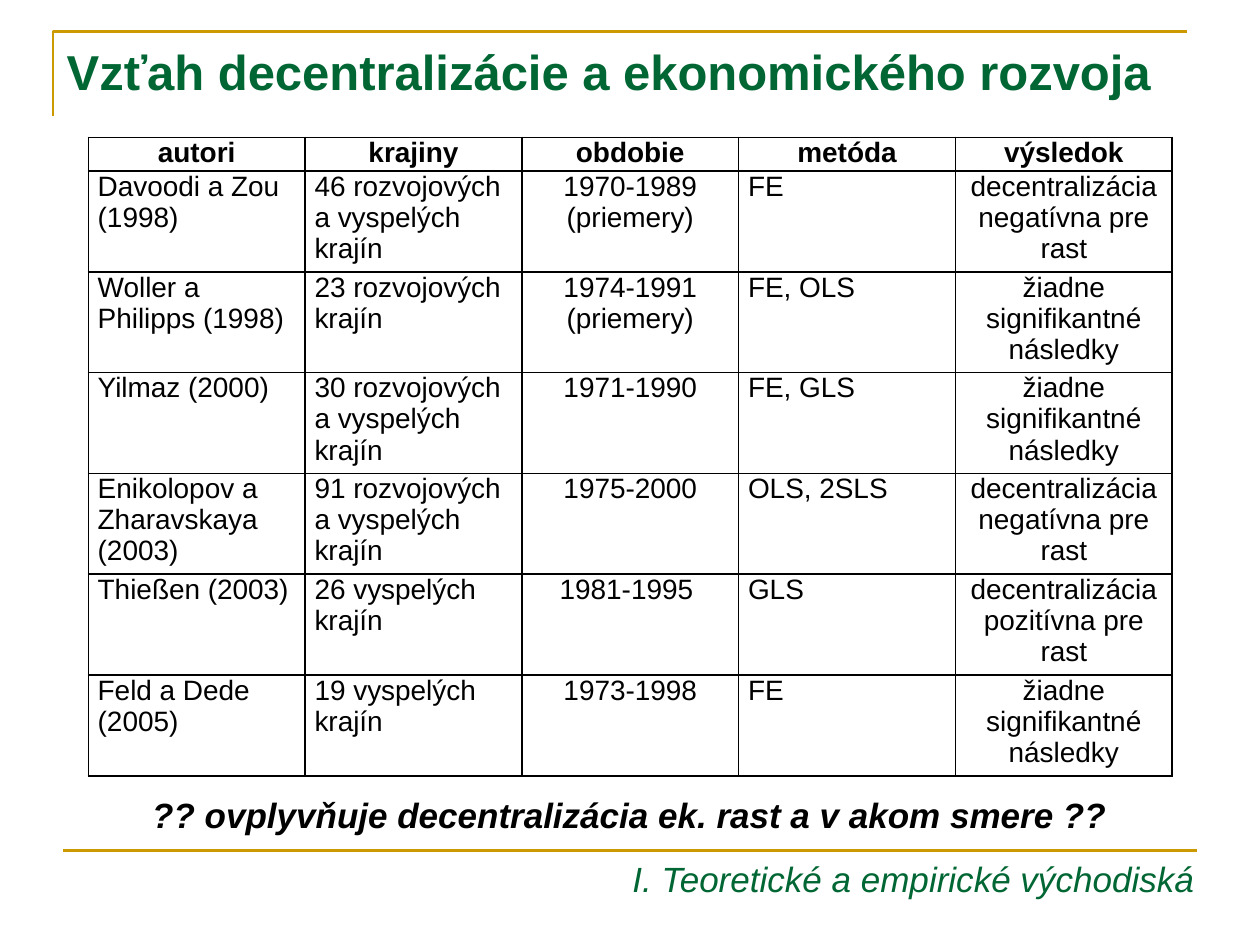
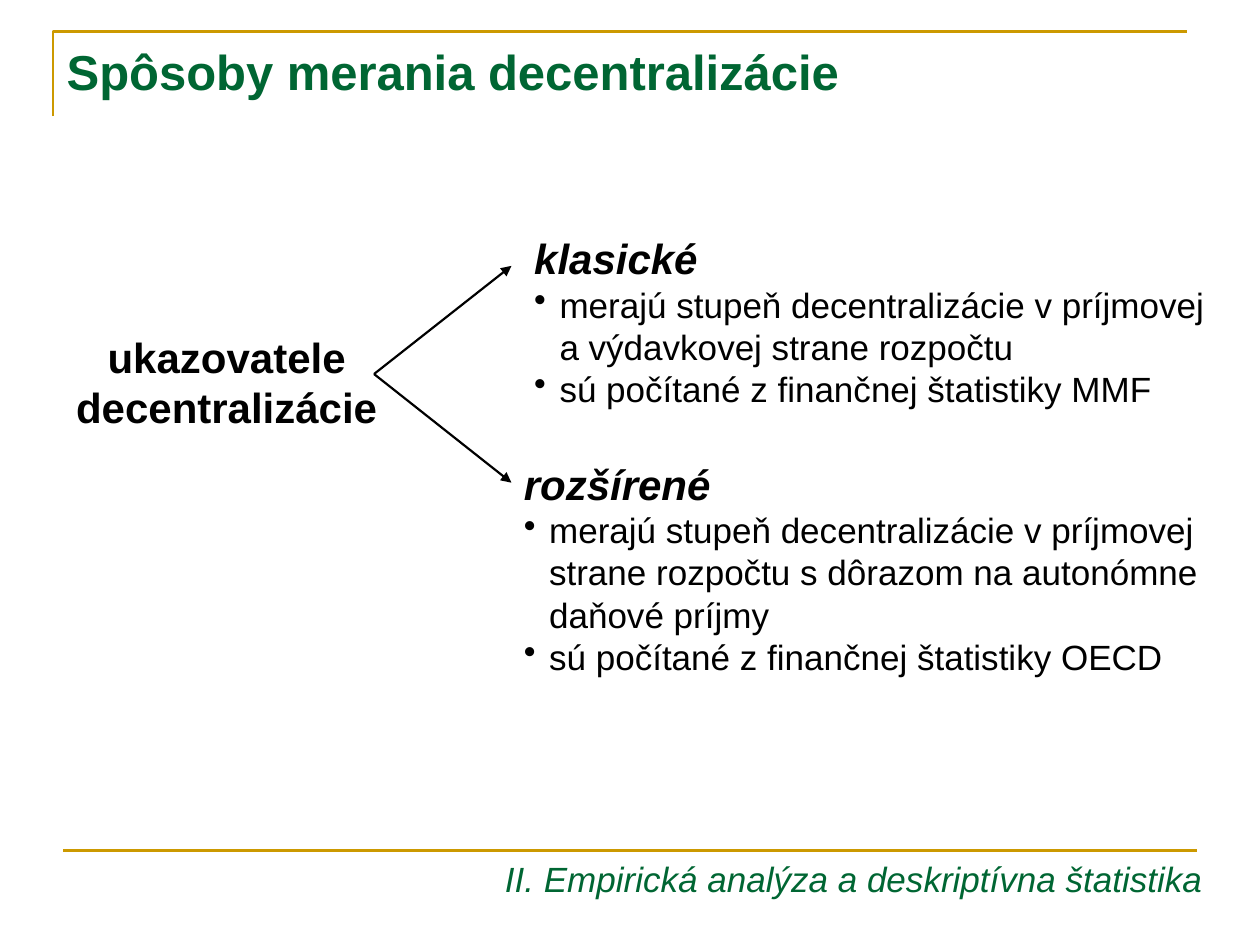
"""Build two slides on decentralisation: research overview and ways of measuring it."""
from lxml.etree import SubElement
from pptx import Presentation
from pptx.dml.color import RGBColor
from pptx.enum.shapes import MSO_CONNECTOR as Connector
from pptx.enum.text import MSO_ANCHOR as Anchor, MSO_AUTO_SIZE as AutoSize, PP_ALIGN as Align
from pptx.oxml.ns import qn
from pptx.util import Cm, Pt

COLORS = {"green": "006633", "gold": "CC9900", "black": "000000"}
FONT = "Arial"
INDENT = Cm(0.51)


def style(paragraph, size, color="black", bold=False, italic=False, align=Align.LEFT):
    paragraph.alignment = align
    font = paragraph.font
    font.name, font.size, font.bold, font.italic = FONT, Pt(size), bold, italic
    font.color.rgb = RGBColor.from_string(COLORS[color])


def add_line(slide, start, end, color, width):
    line = slide.shapes.add_connector(Connector.STRAIGHT, *map(Cm, start + end))
    line.line.color.rgb = RGBColor.from_string(COLORS[color])
    line.line.width = Pt(width)
    SubElement(line._element.spPr, qn("a:effectLst"))
    return line


prs = Presentation()
prs.slide_width, prs.slide_height = Cm(25.4), Cm(19.05)

pages = [
    ("Vzťah decentralizácie a ekonomického rozvoja",
     "I. Teoretické a empirické východiská", 12.5, 11.91),
    ("Spôsoby merania decentralizácie",
     "II. Empirická analýza a deskriptívna štatistika", 9.93, 14.68),
]
for heading, chapter, chapter_left, chapter_width in pages:
    slide = prs.slides.add_slide(prs.slide_layouts[5])
    corner = slide.shapes.build_freeform(Cm(1.07), Cm(2.34))
    corner.add_line_segments([(Cm(1.07), Cm(0.64)), (Cm(23.93), Cm(0.64))], close=False)
    frame = corner.convert_to_shape()
    frame.shadow.inherit = False
    frame.fill.background()
    frame.line.color.rgb = RGBColor.from_string(COLORS["gold"])
    frame.line.width = Pt(1.5)
    add_line(slide, (1.27, 17.15), (24.13, 17.15), "gold", 1.5)

    title = slide.shapes.title
    title.left, title.top, title.width, title.height = Cm(1.09), Cm(0.71), Cm(22.81), Cm(1.45)
    title.text_frame.text = heading
    title.text_frame.auto_size = AutoSize.NONE
    title.text_frame.vertical_anchor = Anchor.TOP
    style(title.text_frame.paragraphs[0], 28, "green", bold=True)

    footer = slide.shapes.add_textbox(Cm(chapter_left), Cm(17.17), Cm(chapter_width), Cm(1.12))
    footer.text_frame.word_wrap = False
    footer.text_frame.text = chapter
    style(footer.text_frame.paragraphs[0], 20, "green", italic=True)

research, measures = prs.slides

studies = [
    ("autori", "krajiny", "obdobie", "metóda", "výsledok"),
    ("Davoodi a Zou (1998)", "46 rozvojových a vyspelých krajín", "1970-1989\n(priemery)",
     "FE", "decentralizácia negatívna pre rast"),
    ("Woller a Philipps (1998)", "23 rozvojových krajín", "1974-1991 (priemery)",
     "FE, OLS", "žiadne signifikantné následky"),
    ("Yilmaz (2000)", "30 rozvojových a vyspelých krajín", "1971-1990",
     "FE, GLS", "žiadne signifikantné následky"),
    ("Enikolopov a Zharavskaya (2003)", "91 rozvojových a vyspelých krajín", "1975-2000",
     "OLS, 2SLS", "decentralizácia negatívna pre rast"),
    ("Thießen (2003)", "26 vyspelých krajín", "1981-1995 ",
     "GLS", "decentralizácia pozitívna pre rast"),
    ("Feld a Dede (2005)", "19 vyspelých krajín", "1973-1998",
     "FE", "žiadne signifikantné následky"),
]
centred_columns = (2, 4)
overview = research.shapes.add_table(
    len(studies), len(studies[0]), Cm(1.78), Cm(2.77), Cm(21.85), Cm(12.85)).table
for column in overview.columns:
    column.width = Cm(4.37)
for r, study in enumerate(studies):
    overview.rows[r].height = Cm(2.03 if r else 0.67)
    for c, entry in enumerate(study):
        cell = overview.cell(r, c)
        cell.text = entry
        cell.margin_left = cell.margin_right = Cm(0.19)
        cell.margin_top = cell.margin_bottom = 0
        centred = r == 0 or c in centred_columns
        for paragraph in cell.text_frame.paragraphs:
            style(paragraph, 16, bold=r == 0, align=Align.CENTER if centred else Align.LEFT)
        cell_props = cell._tc.get_or_add_tcPr()
        for side in ("lnL", "lnR", "lnT", "lnB"):
            border = SubElement(cell_props, qn(f"a:{side}"), w=str(Pt(1)))
            SubElement(SubElement(border, qn("a:solidFill")), qn("a:srgbClr"), val=COLORS["black"])
        cell.fill.background()

question = research.shapes.add_textbox(Cm(1.19), Cm(15.88), Cm(23.01), Cm(1.12))
question.text_frame.word_wrap = True
question.text_frame.text = "?? ovplyvňuje decentralizácia ek. rast a v akom smere ??"
style(question.text_frame.paragraphs[0], 20, bold=True, italic=True, align=Align.CENTER)

for arrow_end in (5.36, 9.73):
    arrow = add_line(measures, (7.54, 7.54), (10.31, arrow_end), "black", 1.25)
    SubElement(arrow.line._get_or_add_ln(), qn("a:tailEnd"), type="triangle")

indicator_groups = [
    (10.52, 4.57, 3.84, "klasické",
     ["merajú stupeň decentralizácie v príjmovej a výdavkovej strane rozpočtu",
      "sú počítané z finančnej štatistiky MMF"]),
    (10.31, 9.12, 4.7, "rozšírené",
     ["merajú stupeň decentralizácie v príjmovej strane rozpočtu s dôrazom na autonómne daňové príjmy",
      "sú počítané z finančnej štatistiky OECD"]),
]
for left, top, height, kind, features in indicator_groups:
    group = measures.shapes.add_textbox(Cm(left), Cm(top), Cm(14.3), Cm(height)).text_frame
    group.word_wrap = True
    group.text = "\n".join([kind, *features])
    style(group.paragraphs[0], 24, bold=True, italic=True)
    for feature in group.paragraphs[1:]:
        props = feature._p.get_or_add_pPr()
        props.set("marL", str(INDENT))
        props.set("indent", str(-INDENT))
        SubElement(props, qn("a:buChar"), char="•")
        style(feature, 20)

indicators = measures.shapes.add_textbox(Cm(1.19), Cm(6.55), Cm(6.76), Cm(2.31))
indicators.text_frame.word_wrap = True
indicators.text_frame.text = "ukazovatele decentralizácie"
style(indicators.text_frame.paragraphs[0], 24, bold=True, align=Align.CENTER)

prs.save("out.pptx")
